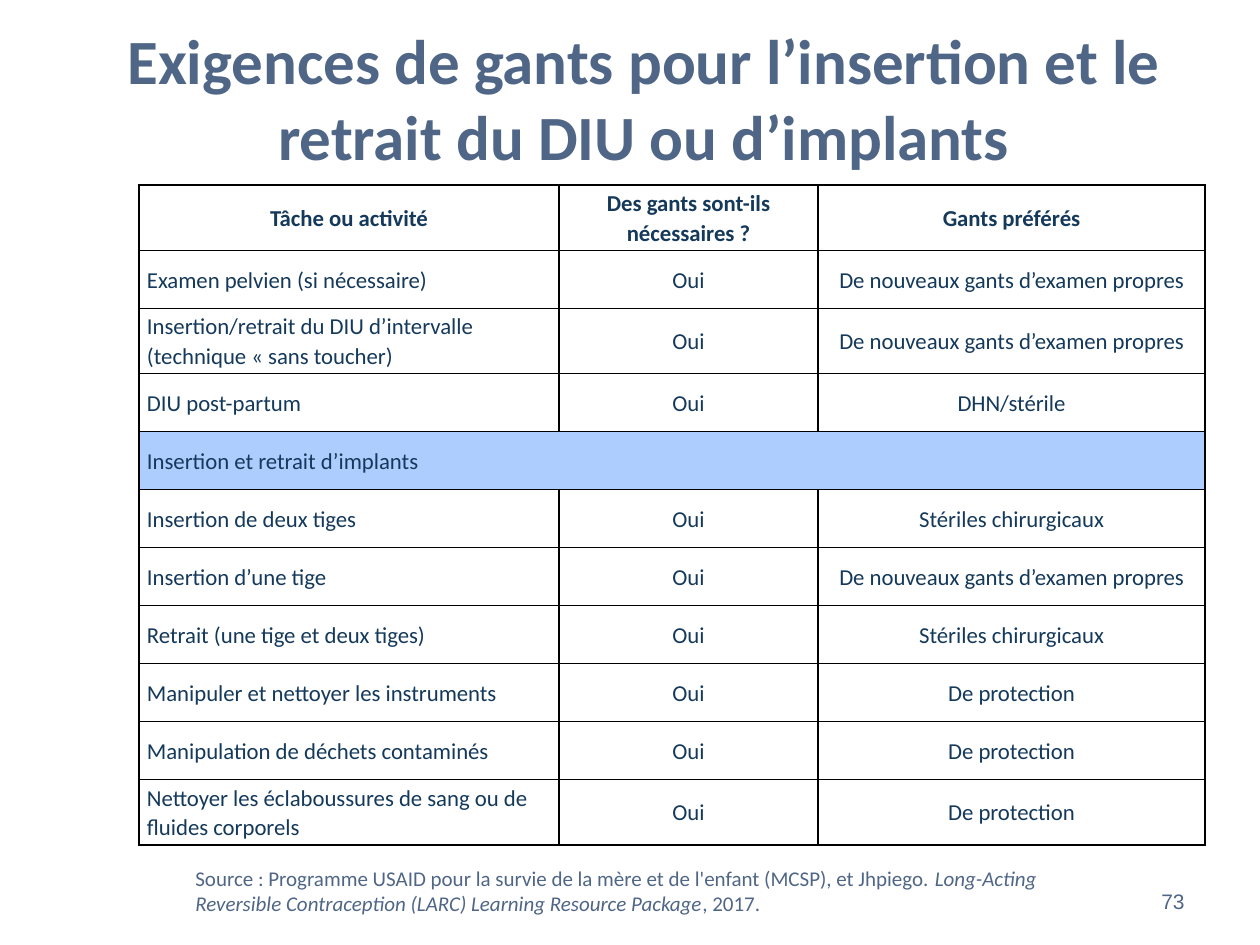
from dataclasses import dataclass

from lxml import etree
from pptx import Presentation
from pptx.dml.color import RGBColor
from pptx.enum.text import MSO_ANCHOR, MSO_AUTO_SIZE, PP_ALIGN
from pptx.oxml.ns import qn
from pptx.util import Emu, Pt

LEFT, CENTER, RIGHT = PP_ALIGN.LEFT, PP_ALIGN.CENTER, PP_ALIGN.RIGHT
TOP, MIDDLE = MSO_ANCHOR.TOP, MSO_ANCHOR.MIDDLE
NO_AUTOFIT = MSO_AUTO_SIZE.NONE
TITLE_ONLY = 5
SCALE = 914400 / 126

EXAM = "De nouveaux gants d’examen propres"
SURGICAL = "Stériles chirurgicaux"
PROTECTIVE = "De protection"
HEADER = ["Tâche ou activité", "Des gants sont-ils nécessaires ?", "Gants préférés"]
IUD_TASKS = [
    ("Examen pelvien (si nécessaire)", EXAM),
    ("Insertion/retrait du DIU d’intervalle (technique « sans toucher)", EXAM),
    ("DIU post-partum", "DHN/stérile"),
]
SECTION = "Insertion et retrait d’implants"
IMPLANT_TASKS = [
    ("Insertion de deux tiges", SURGICAL),
    ("Insertion d’une tige", EXAM),
    ("Retrait (une tige et deux tiges)", SURGICAL),
    ("Manipuler et nettoyer les instruments", PROTECTIVE),
    ("Manipulation de déchets contaminés", PROTECTIVE),
    ("Nettoyer les éclaboussures de sang ou de fluides corporels", PROTECTIVE),
]
SOURCE = [
    ("Source : Programme USAID pour la survie de la mère et de l'enfant (MCSP), et Jhpiego. ", False),
    ("Long-Acting Reversible Contraception (LARC) Learning Resource Package", True),
    (", 2017.", False),
]


@dataclass(frozen=True)
class Theme:
    heading: str = "506687"
    text: str = "15395B"
    band: str = "AECDFF"
    paper: str = "FFFFFF"
    border: str = "000000"
    font: str = "Calibri"
    number_font: str = "Arial"
    title_size: int = 36
    table_size: int = 13
    note_size: int = 12


def px(n):
    return Emu(round(n * SCALE))


class Deck:
    """Draws styled elements on the current slide."""

    def __init__(self, theme):
        self.theme = theme
        self.prs = Presentation()
        self.prs.slide_width, self.prs.slide_height = px(1260), px(945)
        self.s = self.prs.slides.add_slide(self.prs.slide_layouts[TITLE_ONLY])

    def style(self, p, size, color, align=LEFT, bold=False, font=None):
        p.alignment = align
        for r in p.runs:
            r.font.name = font or self.theme.font
            r.font.size = Pt(size)
            r.font.bold = bold
            r.font.color.rgb = RGBColor.from_string(color)

    def title(self, text, x, y, w, h):
        sp = self.s.shapes.title
        sp.left, sp.top, sp.width, sp.height = map(px, (x, y, w, h))
        tf = sp.text_frame
        tf.text = text
        tf.auto_size, tf.vertical_anchor = NO_AUTOFIT, MIDDLE
        self.style(tf.paragraphs[0], self.theme.title_size, self.theme.heading, CENTER, True)

    def note(self, parts, x, y, w, h, align=LEFT, anchor=TOP, font=None):
        tf = self.s.shapes.add_textbox(*map(px, (x, y, w, h))).text_frame
        tf.word_wrap, tf.vertical_anchor = True, anchor
        p = tf.paragraphs[0]
        for text, italic in parts:
            r = p.add_run()
            r.text = text
            r.font.italic = italic
        self.style(p, self.theme.note_size, self.theme.heading, align, font=font)

    def border(self, cell):
        tc_pr = cell._tc.get_or_add_tcPr()
        for i, side in enumerate(("lnL", "lnR", "lnT", "lnB")):
            ln = etree.Element(qn(f"a:{side}"), w=str(Pt(1)))
            fill = etree.SubElement(ln, qn("a:solidFill"))
            etree.SubElement(fill, qn("a:srgbClr"), val=self.theme.border)
            tc_pr.insert(i, ln)

    def cell(self, cell, text, align, bold, fill):
        cell.text = text
        cell.vertical_anchor = MIDDLE
        cell.margin_left = cell.margin_right = px(8)
        cell.margin_top = cell.margin_bottom = px(3)
        cell.fill.solid()
        cell.fill.fore_color.rgb = RGBColor.from_string(fill)
        p = cell.text_frame.paragraphs[0]
        p.line_spacing = 1.07
        self.style(p, self.theme.table_size, self.theme.text, align, bold)
        self.border(cell)

    def table(self, rows, x, y, widths, row_height):
        frame = self.s.shapes.add_table(
            len(rows), len(widths), px(x), px(y), px(sum(widths)), px(row_height * len(rows)))
        table = frame.table
        for column, width in zip(table.columns, widths):
            column.width = px(width)
        for i, row in enumerate(rows):
            table.rows[i].height = px(row_height)
            section = len(row) == 1
            fill = self.theme.band if section else self.theme.paper
            texts = row + [""] * (len(widths) - len(row))
            for j, text in enumerate(texts):
                align = LEFT if i and j == 0 else CENTER
                self.cell(table.cell(i, j), text, align, i == 0, fill)
            if section:
                table.cell(i, 0).merge(table.cell(i, len(widths) - 1))


def main():
    theme = Theme()
    deck = Deck(theme)
    deck.title("Exigences de gants pour l’insertion et le retrait du DIU ou d’implants", 63, 19, 1162, 157)
    iud, implants = ([[task, "Oui", gloves] for task, gloves in tasks]
                     for tasks in (IUD_TASKS, IMPLANT_TASKS))
    deck.table([HEADER, *iud, [SECTION], *implants], 139, 185, [420, 259, 387], 58)
    deck.note([("73", False)], 903, 876, 294, 50, RIGHT, MIDDLE, theme.number_font)
    deck.note(SOURCE, 183, 859, 905, 63)
    deck.prs.save("out.pptx")


if __name__ == "__main__":
    main()
